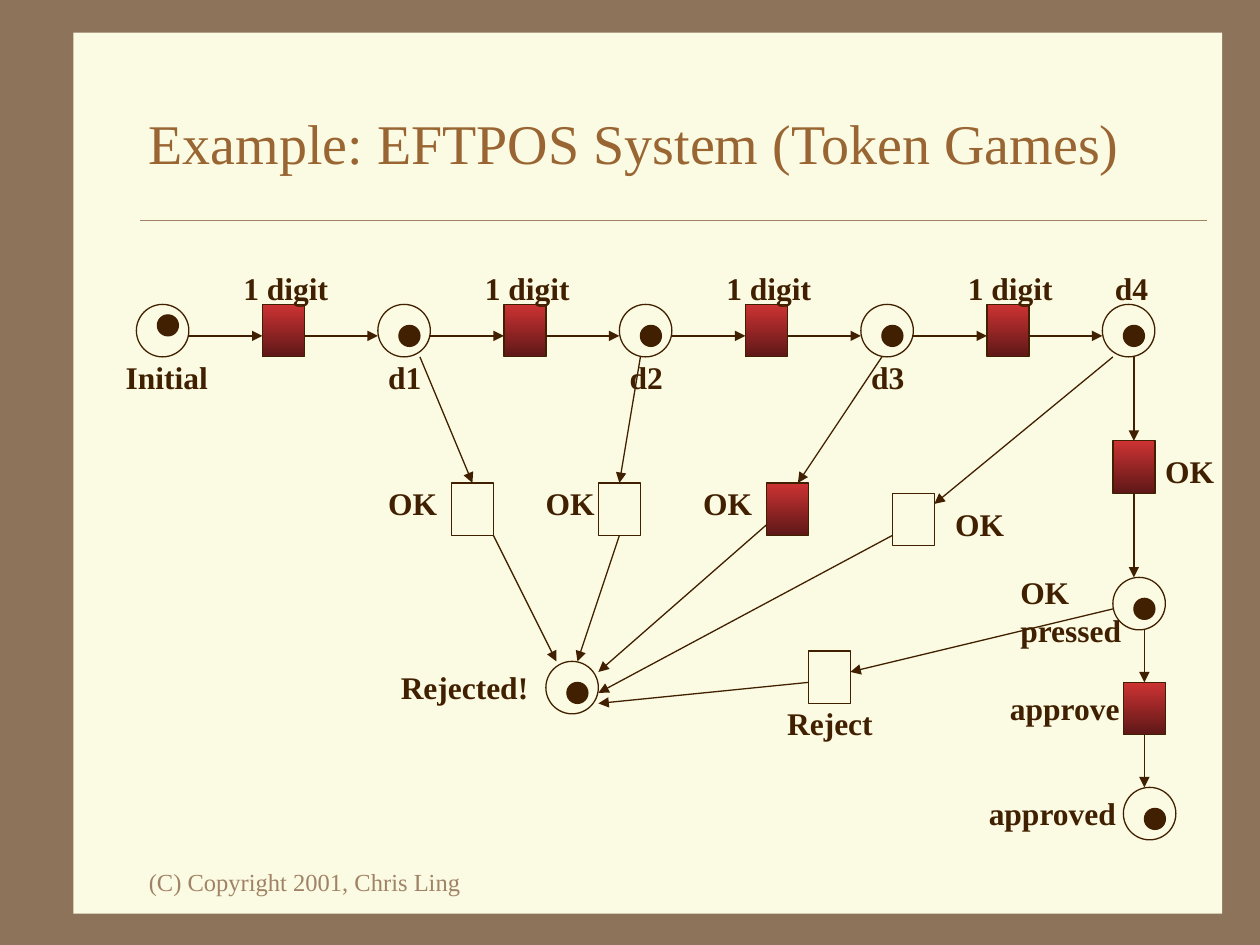
import pptx
import pptx.util
import pptx.dml.color
import pptx.enum.shapes
import pptx.enum.text
import pptx.oxml.ns
import lxml.etree

Cm, Pt = pptx.util.Cm, pptx.util.Pt
RGB = pptx.dml.color.RGBColor
SHAPE = pptx.enum.shapes.MSO_SHAPE
BROWN = RGB(0x8C, 0x73, 0x5A)
CREAM = RGB(0xFB, 0xFA, 0xE2)
TAN = RGB(0xA0, 0x83, 0x66)
RUST = RGB(0x99, 0x66, 0x33)
INK = RGB(0x40, 0x20, 0x00)
RED = RGB(0xCD, 0x33, 0x33)
WINE = RGB(0x5E, 0x17, 0x17)
FONT = "Times New Roman"
UNIT = 2.54 / 12
STEP = 23

PLACES = [(STEP * i, 4) for i in range(5)] + [(93, 30), (94, 50), (39, 38)]
FIRED = [(12 + STEP * i, 4) for i in range(4)] + [(93, 17), (94, 40), (60, 21)]
IDLE = [(30, 21), (44, 21), (64, 37), (72, 22)]
ARCS = [(x + STEP * i, 7, x + 7 + STEP * i, 7) for i in range(4) for x in (5, 16)] + [
    (95, 9, 95, 17), (95, 22, 95, 30), (96, 35, 96, 40), (96, 45, 96, 50),
    (27, 9, 32, 21), (34, 26, 40, 38), (48, 9, 46, 21), (46, 26, 42, 38),
    (71, 9, 63, 21), (60, 25, 44, 39), (93, 9, 76, 23), (72, 26, 44, 41),
    (93, 33, 68, 39), (64, 40, 44, 42)]
LABELS = [("1 digit", 9 + STEP * i, 0, 10.6) for i in range(4)]
LABELS += [(f"d{i}", STEP * i - 0.2, 8.5, 5.7) for i in (1, 2, 3)]
LABELS += [("OK", x, 20.5, 7.2) for x in (22.8, 37.8, 52.8)]
LABELS += [
    ("Initial", -2.2, 8.5, 10.3), ("d4", 92, 0, 5.7),
    ("OK", 96.8, 17.5, 7.2), ("OK", 76.8, 22.5, 7.2),
    ("OK\npressed", 83, 29, 12.2), ("approve", 82, 40, 13.1),
    ("approved", 80, 50, 14.7), ("Reject", 60.8, 41.5, 10.8),
    ("Rejected!", 24, 38, 14.7)]


def shape(slide, kind, box, fill=None, line=INK):
    """Add a preset shape in a box given in centimetres."""
    item = slide.shapes.add_shape(kind, *map(Cm, box))
    item.shadow.inherit = False
    if fill is None:
        item.fill.background()
    else:
        item.fill.solid()
        item.fill.fore_color.rgb = fill
    if line is None:
        item.line.fill.background()
    else:
        item.line.color.rgb = line
        item.line.width = Pt(0.75)
    return item


def line(slide, ends, color, width, arrow=False):
    """Add a straight line, with an arrowhead at its end if asked."""
    item = slide.shapes.add_connector(
        pptx.enum.shapes.MSO_CONNECTOR.STRAIGHT, *map(Cm, ends))
    item.line.color.rgb = color
    item.line.width = Pt(width)
    if arrow:
        head = lxml.etree.SubElement(
            item.line._get_or_add_ln(), pptx.oxml.ns.qn("a:tailEnd"))
        head.set("type", "triangle")
    lxml.etree.SubElement(
        item._element.spPr, pptx.oxml.ns.qn("a:effectLst"))


def text(slide, words, box, size, color, bold=False):
    """Add a wrapping text box and return its frame."""
    frame = slide.shapes.add_textbox(*map(Cm, box)).text_frame
    frame.word_wrap = True
    frame.text = words
    for para in frame.paragraphs:
        font = para.font
        font.name, font.size, font.bold = FONT, Pt(size), bold
        font.color.rgb = color
    return frame


def label(slide, words, box):
    """Add a bold label that grows with its words and never wraps."""
    frame = text(slide, words, box, 18, INK, True)
    frame.word_wrap = False
    frame.auto_size = pptx.enum.text.MSO_AUTO_SIZE.SHAPE_TO_FIT_TEXT


def page(slide, box):
    """Draw the panel, title, rule and footer."""
    left, top, width, height = box
    fill = slide.background.fill
    fill.solid()
    fill.fore_color.rgb = BROWN
    shape(slide, SHAPE.RECTANGLE, box, CREAM, None)
    rule = top + 3.78
    line(slide, (left + 1.35, rule, left + width - 0.3, rule), TAN, 0.25)
    title = text(slide, "Example: EFTPOS System (Token Games)",
                 (left + 1.27, top + 0.61, 21.59, 3.18), 32, RUST)
    title.vertical_anchor = pptx.enum.text.MSO_ANCHOR.MIDDLE
    text(slide, "(C) Copyright 2001, Chris Ling",
         (left + 1.27, top + height - 1.07, 6.99, 0.84), 14, TAN)


def net(slide, left, top):
    """Draw the Petri net on its grid from the given corner."""
    def cell(x, y, wide, high):
        """Turn a grid box into centimetres."""
        return left + x * UNIT, top + y * UNIT, wide * UNIT, high * UNIT

    for x, y in FIRED:
        fill = shape(slide, SHAPE.RECTANGLE, cell(x, y, 4, 5)).fill
        fill.gradient()
        fill.gradient_angle = 270
        for stop, color in zip(fill.gradient_stops, (RED, WINE)):
            stop.color.rgb = color
    for x, y in IDLE:
        shape(slide, SHAPE.RECTANGLE, cell(x, y, 4, 5))
    for x, y in PLACES:
        drop = 1 if x == 0 else 2
        shape(slide, SHAPE.OVAL, cell(x + 2, y + drop, 2, 2), INK)
        shape(slide, SHAPE.OVAL, cell(x, y, 5, 5))
    for x1, y1, x2, y2 in ARCS:
        ends = cell(x1, y1, 0, 0)[:2] + cell(x2, y2, 0, 0)[:2]
        line(slide, ends, INK, 0.75, True)
    for words, x, y, wide in LABELS:
        high = 8.4 if "\n" in words else 4.8
        label(slide, words, cell(x, y, wide, high))


def main():
    """Build and save the deck."""
    deck = pptx.Presentation()
    deck.slide_width, deck.slide_height = Cm(25.4), Cm(19.05)
    slide = deck.slides.add_slide(deck.slide_layouts[6])
    page(slide, (1.48, 0.66, 23.16, 17.76))
    net(slide, 2.75, 5.29)
    deck.save("out.pptx")


if __name__ == "__main__":
    main()
